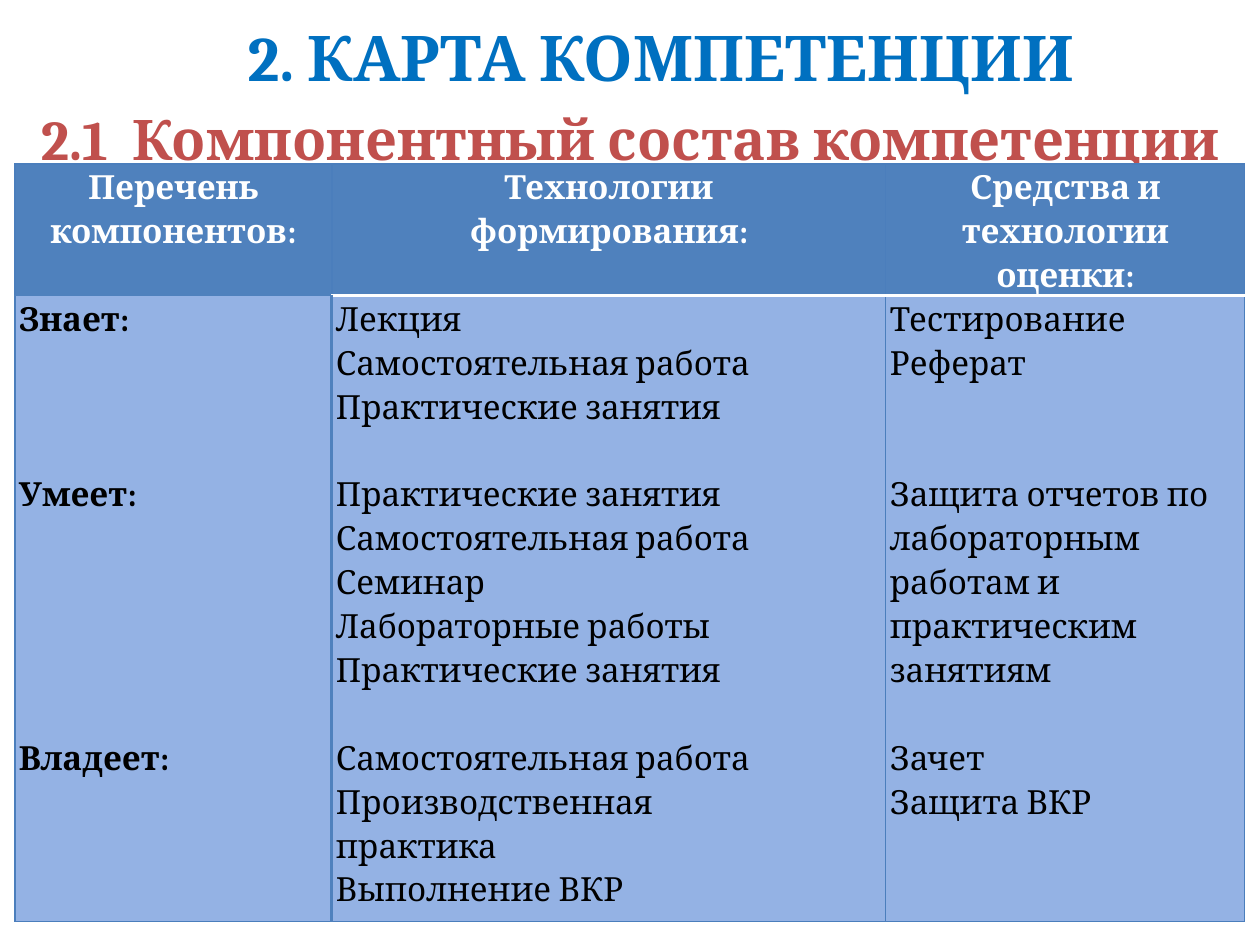
import pptx
import pptx.util
import pptx.dml.color
import pptx.enum.text
import pptx.oxml
import pptx.oxml.ns

EMU_PER_PX = 914400 // 126
FONT = "Cambria"
LINE_HEIGHT = 25.1  # points, one line of table text
ALIGN = pptx.enum.text.PP_ALIGN
ANCHOR = pptx.enum.text.MSO_ANCHOR


def px(length):
    return pptx.util.Emu(length * EMU_PER_PX)


def color(value):
    return pptx.dml.color.RGBColor.from_string(value)


def set_attributes(target, values):
    for name, value in values.items():
        setattr(target, name, value)


class SlideBuilder:
    blue, border, body_fill, white = "4F81BD", "4B7EBC", "94B2E4", "FFFFFF"

    def __init__(self, slide):
        self.slide = slide

    def add_run(self, paragraph, text, size, hex_color, bold):
        run = paragraph.add_run()
        run.text = text
        set_attributes(run.font, {"name": FONT, "size": pptx.util.Pt(size), "bold": bold})
        run.font.color.rgb = color(hex_color)

    def add_title(self, lines, left, top, width, height):
        title = self.slide.shapes.title
        set_attributes(title, {"left": px(left), "top": px(top),
                               "width": px(width), "height": px(height)})
        set_attributes(title.text_frame, {
            "word_wrap": True, "vertical_anchor": ANCHOR.MIDDLE,
            "auto_size": pptx.enum.text.MSO_AUTO_SIZE.NONE})
        paragraph = title.text_frame.paragraphs[0]
        set_attributes(paragraph, {"alignment": ALIGN.CENTER, "line_spacing": 1.15})
        paragraph._p.get_or_add_pPr().set("indent", str(px(62)))
        for index, (text, size, hex_color) in enumerate(lines):
            if index:
                paragraph.add_line_break()
            self.add_run(paragraph, text, size, hex_color, True)

    def add_border(self, cell, side, hex_color, points):
        line = pptx.oxml.parse_xml(
            f'<a:{side} {pptx.oxml.ns.nsdecls("a")} w="{int(points * 12700)}">'
            f'<a:solidFill><a:srgbClr val="{hex_color}"/></a:solidFill></a:{side}>')
        properties = cell._tc.get_or_add_tcPr()
        # Borders come before the fill, in the order they are added
        position = sum(child.tag.endswith(("lnL", "lnR", "lnT", "lnB")) for child in properties)
        properties.insert(position, line)

    def fill_cell(self, cell, entries, fill, text_color, bold, alignment):
        set_attributes(cell, {"margin_left": px(4), "margin_right": px(4),
                              "margin_top": 0, "margin_bottom": 0,
                              "vertical_anchor": ANCHOR.TOP})
        cell.fill.solid()
        cell.fill.fore_color.rgb = color(fill)
        for index, (text, empty_lines) in enumerate(entries):
            frame = cell.text_frame
            paragraph = frame.add_paragraph() if index else frame.paragraphs[0]
            set_attributes(paragraph, {
                "alignment": alignment, "line_spacing": 1.15,
                "space_before": pptx.util.Pt(empty_lines * LINE_HEIGHT)})
            self.add_run(paragraph, text, 19, text_color, bold)

    def add_table(self, header, body, left, top, widths, heights):
        table = self.slide.shapes.add_table(
            2, len(widths), px(left), px(top), px(sum(widths)), px(sum(heights))).table
        for column, width in zip(table.columns, widths):
            column.width = px(width)
        for row, height in zip(table.rows, heights):
            row.height = px(height)
        for index, (heading, entries) in enumerate(zip(header, body)):
            top_cell, body_cell = table.cell(0, index), table.cell(1, index)
            first = index == 0
            self.fill_cell(top_cell, [(text, 0) for text in heading],
                           self.blue, self.white, True, ALIGN.CENTER)
            self.fill_cell(body_cell, entries, self.body_fill, "000000", first, ALIGN.LEFT)
            # The rule under the header is white, except over the first column
            rule = (self.blue, 0.75) if first else (self.white, 2)
            thin = (self.border, 0.75)
            divider = (self.blue, 2)
            body_left = divider if index == 1 else thin
            body_right = divider if first else thin
            for cell, borders in ((top_cell, (thin, thin, thin, rule)),
                                  (body_cell, (body_left, body_right, rule, thin))):
                for side, style in zip(("lnL", "lnR", "lnT", "lnB"), borders):
                    self.add_border(cell, side, *style)


def main():
    presentation = pptx.Presentation()
    set_attributes(presentation, {"slide_width": px(1260), "slide_height": px(945)})
    slide = presentation.slides.add_slide(presentation.slide_layouts[5])
    builder = SlideBuilder(slide)

    # Two-line heading
    builder.add_title([("2. КАРТА КОМПЕТЕНЦИИ", 36, "0070C0"),
                       ("2.1  Компонентный состав компетенции", 32, "C0504D")],
                      0, 0, 1260, 179)

    # Competence table: each entry is a text and the empty lines above it
    header = [["Перечень компонентов:"],
              ["Технологии", "формирования:"],
              ["Средства и технологии", "оценки:"]]
    components = [("Знает:", 0), ("Умеет:", 3), ("Владеет:", 5)]
    technologies = [
        ("Лекция", 0), ("Самостоятельная работа", 0), ("Практические занятия", 0),
        ("Практические занятия", 1), ("Самостоятельная работа", 0), ("Семинар", 0),
        ("Лабораторные работы", 0), ("Практические занятия", 0),
        ("Самостоятельная работа", 1), ("Производственная", 0), ("практика", 0),
        ("Выполнение ВКР", 0)]
    assessment = [
        ("Тестирование", 0), ("Реферат", 0),
        ("Защита отчетов по", 2), ("лабораторным работам и", 0),
        ("практическим занятиям", 0), ("Зачет", 1), ("Защита ВКР", 0)]
    builder.add_table(header, [components, technologies, assessment],
                      15, 164, (317, 554, 359), (126, 626))
    presentation.save("out.pptx")


if __name__ == "__main__":
    main()
